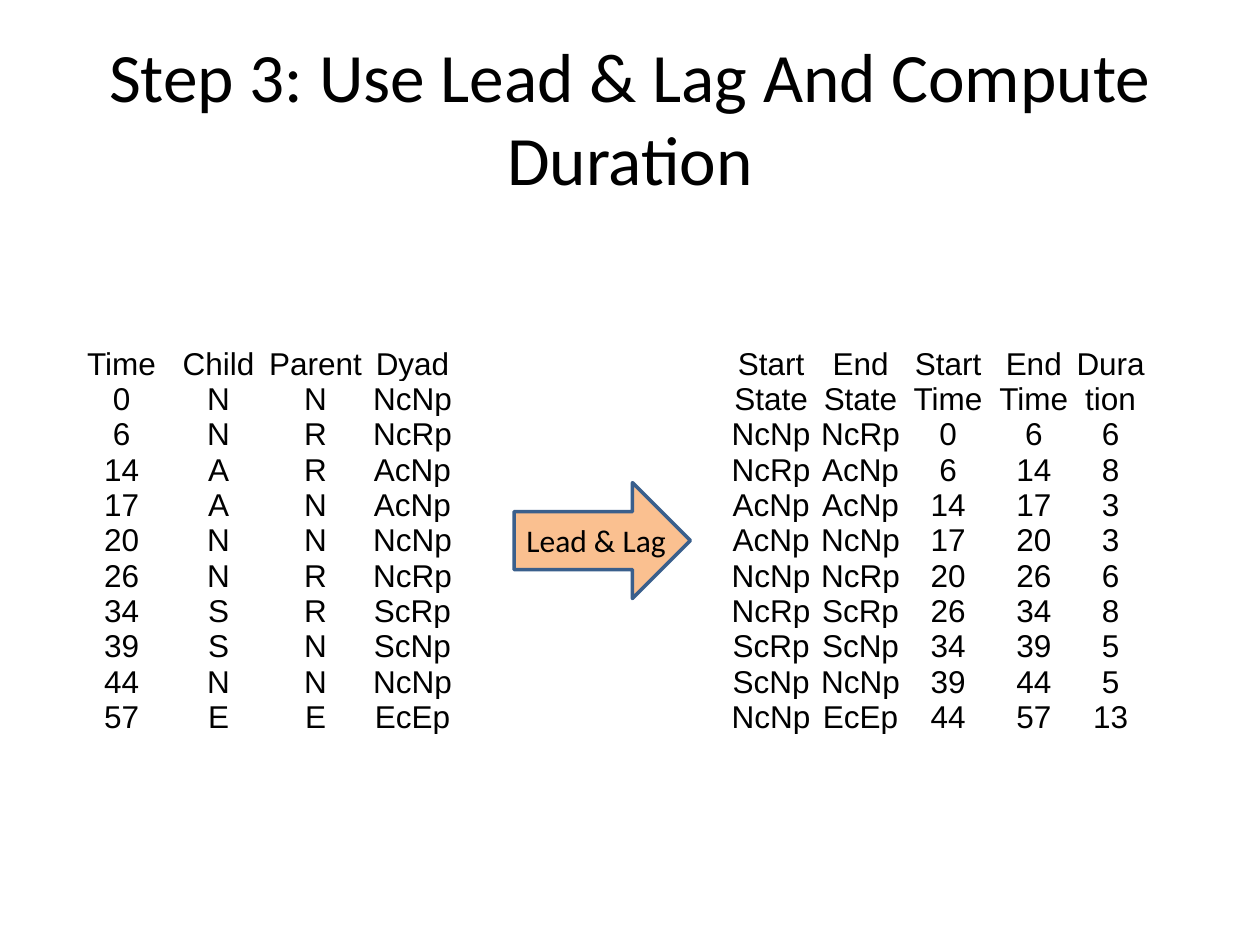
from pptx import Presentation
from pptx.dml.color import RGBColor as RGB
from pptx.enum.shapes import MSO_SHAPE as Shape
from pptx.enum.text import MSO_ANCHOR as Anchor, PP_ALIGN as Align
from pptx.util import Inches, Pt

# Content
TITLE = "Step 3: Use Lead & Lag And Compute Duration"
STEP = "Lead & Lag"
HEAD = ("Time", "Child", "Parent", "Dyad")
EVENTS = [
    (0, "N", "N", "NcNp"),
    (6, "N", "R", "NcRp"),
    (14, "A", "R", "AcNp"),
    (17, "A", "N", "AcNp"),
    (20, "N", "N", "NcNp"),
    (26, "N", "R", "NcRp"),
    (34, "S", "R", "ScRp"),
    (39, "S", "N", "ScNp"),
    (44, "N", "N", "NcNp"),
    (57, "E", "E", "EcEp"),
]
SPAN_HEAD = ("Start State", "End State", "Start Time", "End Time", "Duration")
# Each event is paired with the one that follows it
SPANS = [(a[-1], b[-1], a[0], b[0], b[0] - a[0])
         for a, b in zip(EVENTS, EVENTS[1:])]

COLORS = {"text": "000000", "arrow": "FAC090", "edge": "3A5F8C"}
WIDTH, HEIGHT = Inches(10), Inches(7.5)

# Places as percent of the slide: left, top, width, height
PLACES = {
    "title": (5, 4, 90, 16.67),
    "events": (5.8, 36.67, 30.8, 44),
    "spans": (57.5, 36.67, 33.5, 44),
    "arrow": (40.8, 51.07, 14, 12.27),
    "step": (40.8, 54.53, 15, 9.47),
}
# Column widths and row height, also in percent
EVENT_COLS, EVENT_ROW = (7.7,) * 4, 3.07
SPAN_COLS, SPAN_ROW = (7.4, 6.8, 7.1, 6.5, 5.7), 2.4


def across(share):
    return round(WIDTH * share / 100)


def down(share):
    return round(HEIGHT * share / 100)


def place(name):
    x, y, w, h = PLACES[name]
    return across(x), down(y), across(w), down(h)


def write(frame, text, font, size, align):
    frame.word_wrap = True
    para = frame.paragraphs[0]
    para.text = text
    para.alignment = align
    para.font.name = font
    para.font.size = Pt(size)
    para.font.color.rgb = RGB.from_string(COLORS["text"])


def add_grid(slide, name, rows, cols, pitch):
    box = slide.shapes.add_table(len(rows), len(cols), *place(name))
    table = box.table
    table.first_row = table.horz_banding = False
    for col, share in zip(table.columns, cols):
        col.width = across(share)
    for row, values in zip(table.rows, rows):
        row.height = down(pitch)
        for cell, value in zip(row.cells, values):
            cell.fill.background()
            cell.margin_left = cell.margin_right = 0
            cell.margin_top = cell.margin_bottom = 0
            cell.vertical_anchor = Anchor.BOTTOM
            write(cell.text_frame, str(value), "Arial", 18, Align.CENTER)
    box.height = place(name)[3]


def main():
    deck = Presentation()
    deck.slide_width, deck.slide_height = WIDTH, HEIGHT
    slide = deck.slides.add_slide(deck.slide_layouts[6])

    # Tables before and after the step
    add_grid(slide, "events", [HEAD] + EVENTS, EVENT_COLS, EVENT_ROW)
    add_grid(slide, "spans", [SPAN_HEAD] + SPANS, SPAN_COLS, SPAN_ROW)

    # Title
    title = slide.shapes.add_textbox(*place("title")).text_frame
    title.vertical_anchor = Anchor.MIDDLE
    write(title, TITLE, "Calibri", 39.6, Align.CENTER)

    # Arrow with its label
    group = slide.shapes.add_group_shape().shapes
    arrow = group.add_shape(Shape.RIGHT_ARROW, *place("arrow"))
    arrow.shadow.inherit = False
    arrow.fill.solid()
    arrow.fill.fore_color.rgb = RGB.from_string(COLORS["arrow"])
    arrow.line.color.rgb = RGB.from_string(COLORS["edge"])
    arrow.line.width = Pt(2)
    label = group.add_textbox(*place("step")).text_frame
    write(label, STEP, "Calibri", 18, Align.LEFT)

    deck.save("out.pptx")


if __name__ == "__main__":
    main()
